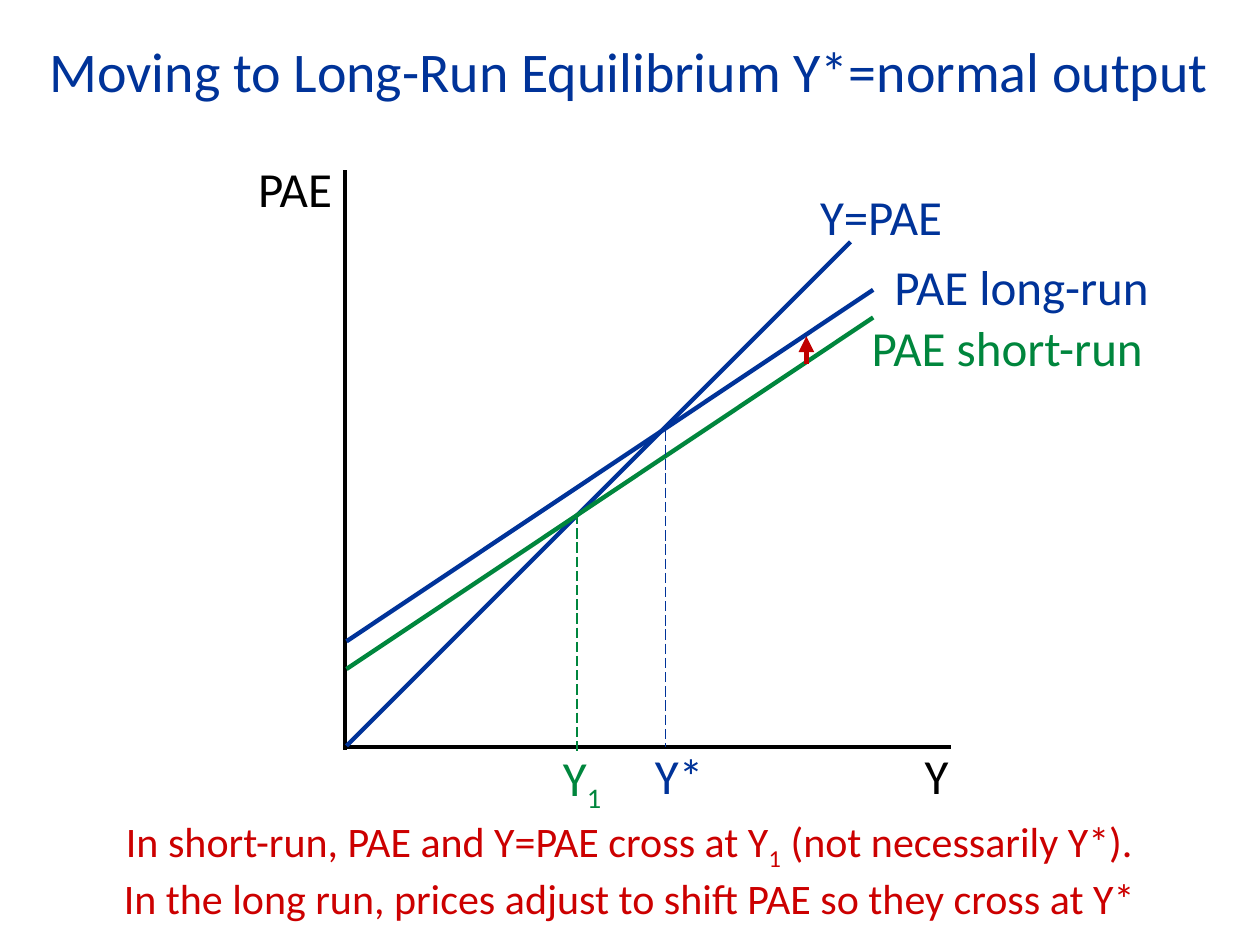
from pptx import Presentation
from pptx.dml.color import RGBColor as RGB
from pptx.enum.dml import MSO_LINE as Dash
from pptx.enum.shapes import MSO_CONNECTOR as Conn
from pptx.enum.text import MSO_ANCHOR as Anchor, PP_ALIGN as Align
from pptx.oxml.ns import qn
from pptx.util import Inches, Pt
from lxml import etree

HUES = {"blue": "003399", "green": "00863D", "black": "000000",
        "red": "CC0000", "dark": "C00000"}

deck = Presentation()
deck.slide_width, deck.slide_height = Inches(10), Inches(7.5)
slide = deck.slides.add_slide(deck.slide_layouts[5])


def write(shape, box, lines, size, hue, align=Align.LEFT):
    """Place a shape and fill it; each line is a list of runs, "_" marks a subscript."""
    shape.left, shape.top, shape.width, shape.height = map(Inches, box)
    frame = shape.text_frame
    frame.word_wrap = True
    for i, runs in enumerate(lines):
        para = frame.add_paragraph() if i else frame.paragraphs[0]
        para.alignment = align
        for text in runs:
            run = para.add_run()
            run.text = text.lstrip("_")
            font = run.font
            font.name, font.size = "Calibri", Pt(size)
            font.color.rgb = RGB.from_string(HUES[hue])
            if text.startswith("_"):
                font._element.set("baseline", "-25000")
    return frame


def draw(x1, y1, x2, y2, hue, width=2.5):
    """Draw a straight line without a shadow."""
    line = slide.shapes.add_connector(Conn.STRAIGHT, *map(Inches, (x1, y1, x2, y2)))
    line.line.color.rgb = RGB.from_string(HUES[hue])
    line.line.width = Pt(width)
    etree.SubElement(line._element.spPr, qn("a:effectLst"))
    return line


# Title
frame = write(slide.shapes.title, (0.18, 0.24, 9.63, 0.64),
              [["Moving to Long-Run Equilibrium Y*=normal output"]], 32, "blue", Align.CENTER)
frame.vertical_anchor = Anchor.MIDDLE

# Axes, 45-degree line and the two spending lines
left, base, end = 2.75, 5.93, 6.93
draw(2.74, 1.35, 2.74, 5.95, "black")
draw(left, base, 7.55, base, "black")
draw(left, 5.92, 6.75, 1.92, "blue")
rise = 2.79
for start, hue in ((5.09, "blue"), (5.31, "green")):
    draw(left, start, end, start - rise, hue)

# Dashed drops from the crossings to the output axis
for x, top, foot, hue in ((5.28, 3.42, base, "blue"), (4.58, 4.08, 5.96, "green")):
    draw(x, top, x, foot, hue, 0.75).line.dash_style = Dash.LONG_DASH

# Arrow for the upward shift
arrow = draw(6.4, 2.89, 6.4, 2.67, "dark", 3)
etree.SubElement(arrow.line._get_or_add_ln(), qn("a:tailEnd"), type="triangle")

# Labels
labels = [
    ((1.95, 1.3, 0.82, 0.49), ["PAE"], "black"),
    ((7.24, 5.87, 0.49, 0.57), ["Y"], "black"),
    ((6.41, 1.43, 1.25, 0.57), ["Y=PAE"], "blue"),
    ((7, 1.99, 2.92, 1.04), ["PAE long-run"], "blue"),
    ((6.82, 2.47, 2.92, 1.04), ["PAE short-run"], "green"),
    ((5.1, 5.87, 0.66, 0.57), ["Y*"], "blue"),
    ((4.37, 5.88, 0.66, 0.57), ["Y", "_1"], "green"),
]
for box, runs, hue in labels:
    frame = write(slide.shapes.add_textbox(0, 0, 0, 0), box, [runs], 28, hue)
    if runs == ["PAE"]:
        frame.paragraphs[0].line_spacing = 0.8

# Conclusion
write(slide.shapes.add_textbox(0, 0, 0, 0), (0.62, 6.42, 8.75, 0.91), [
    ["In short-run, PAE and Y=PAE cross at Y", "_1", " (not necessarily Y*)."],
    ["In the long run, prices adjust to shift PAE so they cross at Y*"],
], 24, "red", Align.CENTER)

deck.save("out.pptx")
